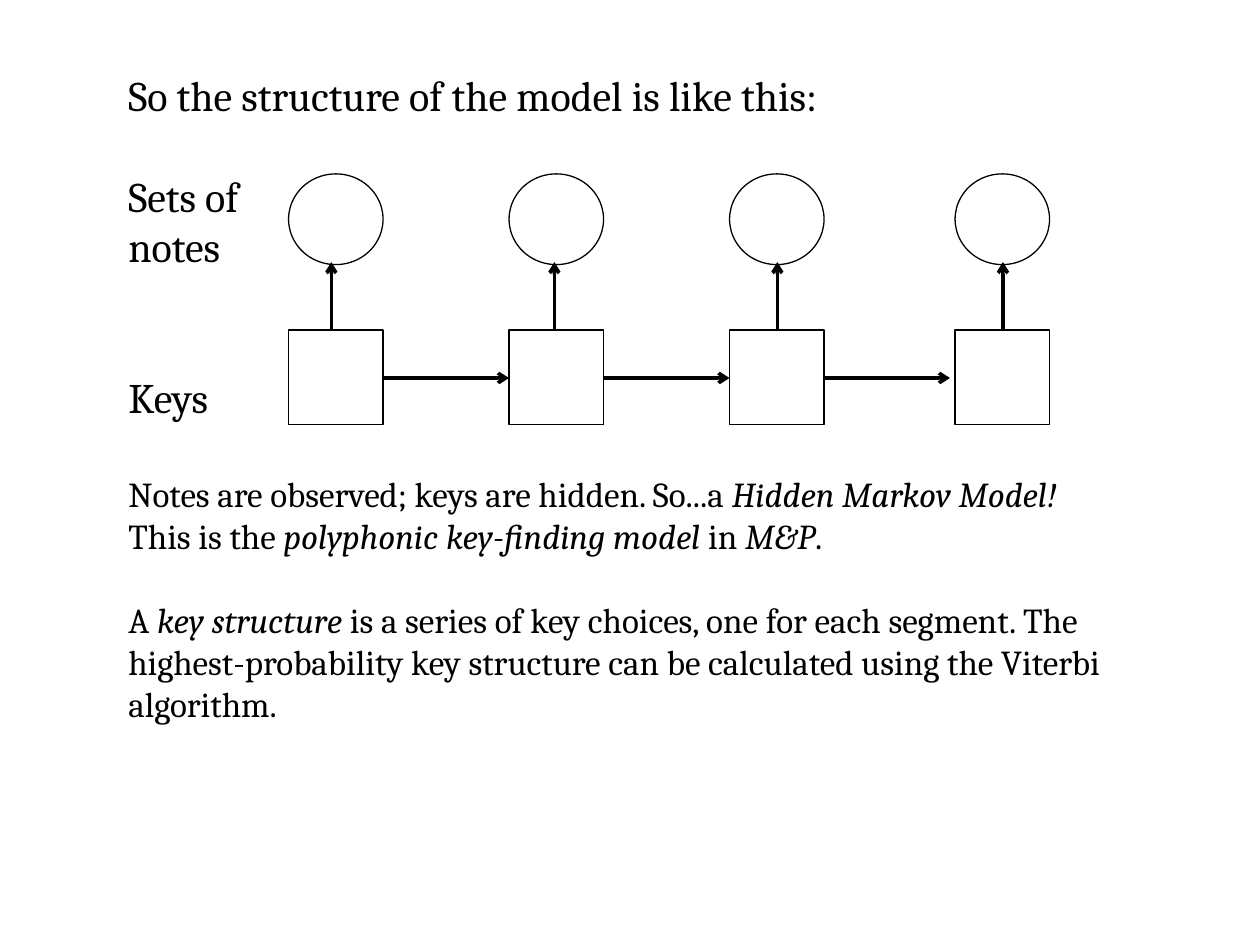
from dataclasses import dataclass

from lxml import etree
from pptx import Presentation, util as u
from pptx.dml.color import RGBColor
from pptx.enum import shapes, text
from pptx.oxml import ns


@dataclass(frozen=True)
class Theme:
    ink: RGBColor = RGBColor(0, 0, 0)
    font: str = "Cambria"
    large: int = 24
    small: int = 20
    thin: float = 0.75
    thick: float = 2


THEME = Theme()
PITCH = 1.2  # line height as a share of type size

# Each paragraph: size, lines of space above, runs of (wording, italic)
PROSE = [
    (THEME.large, 0, [("So the structure of the model is like this:", False)]),
    (THEME.large, 1, [("Sets of", False)]),
    (THEME.large, 0, [("notes", False)]),
    (THEME.large, 2, [("Keys", False)]),
    (THEME.small, 1.2, [
        ("Notes are observed; keys are hidden. So...a ", False),
        ("Hidden Markov Model! ", True),
        ("This is the ", False),
        ("polyphonic key-finding model", True),
        (" in ", False),
        ("M&P", True),
        (".", False),
    ]),
    (THEME.small, 1, [
        ("A ", False),
        ("key structure", True),
        (" is a series of key choices, one for each segment. The "
         "highest-probability key structure can be calculated using "
         "the Viterbi algorithm.", False),
    ]),
]

# Model: left edge of each segment and centre of its upward arrow
SEGMENTS = [(2.29, 2.63), (4.04, 4.4), (5.79, 6.17), (7.58, 7.96)]
SIDE = 0.75
NOTE_TOP, NOTE_H = 1.38, 0.72
KEY_TOP = 2.62
STEP_Y, STEP_W = 3, 1


def add_prose(slide, left, top, width, height):
    box = slide.shapes.add_textbox(*map(u.Inches, (left, top, width, height)))
    frame = box.text_frame
    frame.word_wrap = True
    frame.auto_size = text.MSO_AUTO_SIZE.SHAPE_TO_FIT_TEXT
    for i, (size, gap, runs) in enumerate(PROSE):
        para = frame.add_paragraph() if i else frame.paragraphs[0]
        para.space_before = u.Pt(gap * size * PITCH)
        for words, slant in runs:
            run = para.add_run()
            run.text = words
            run.font.name = THEME.font
            run.font.size = u.Pt(size)
            run.font.italic = slant
            run.font.color.rgb = THEME.ink


def add_node(slide, kind, left, top, height):
    node = slide.shapes.add_shape(
        kind, *map(u.Inches, (left, top, SIDE, height)))
    node.shadow.inherit = False
    node.fill.background()
    node.line.color.rgb = THEME.ink
    node.line.width = u.Pt(THEME.thin)


def add_arrow(slide, x1, y1, x2, y2):
    arrow = slide.shapes.add_connector(
        shapes.MSO_CONNECTOR.STRAIGHT, *map(u.Inches, (x1, y1, x2, y2)))
    arrow.line.color.rgb = THEME.ink
    arrow.line.width = u.Pt(THEME.thick)
    line = arrow.line._get_or_add_ln()
    etree.SubElement(line, ns.qn("a:tailEnd"), type="arrow")
    etree.SubElement(arrow._element.spPr, ns.qn("a:effectLst"))


def main():
    deck = Presentation()
    deck.slide_width, deck.slide_height = u.Inches(10), u.Inches(7.5)
    slide = deck.slides.add_slide(deck.slide_layouts[6])

    # Running text with the row labels
    add_prose(slide, 0.92, 0.5, 8.08, 5.35)

    # Hidden keys below, observed notes above
    kind = shapes.MSO_SHAPE
    for left, _ in SEGMENTS:
        add_node(slide, kind.RECTANGLE, left, KEY_TOP, SIDE)
    for left, _ in SEGMENTS:
        add_node(slide, kind.OVAL, left, NOTE_TOP, NOTE_H)

    # Key to next key, then key to notes
    for left, _ in SEGMENTS[:-1]:
        start = left + SIDE
        add_arrow(slide, start, STEP_Y, start + STEP_W, STEP_Y)
    for _, mid in SEGMENTS:
        add_arrow(slide, mid, KEY_TOP - 0.01, mid, NOTE_TOP + NOTE_H - 0.02)

    deck.save("out.pptx")


if __name__ == "__main__":
    main()
